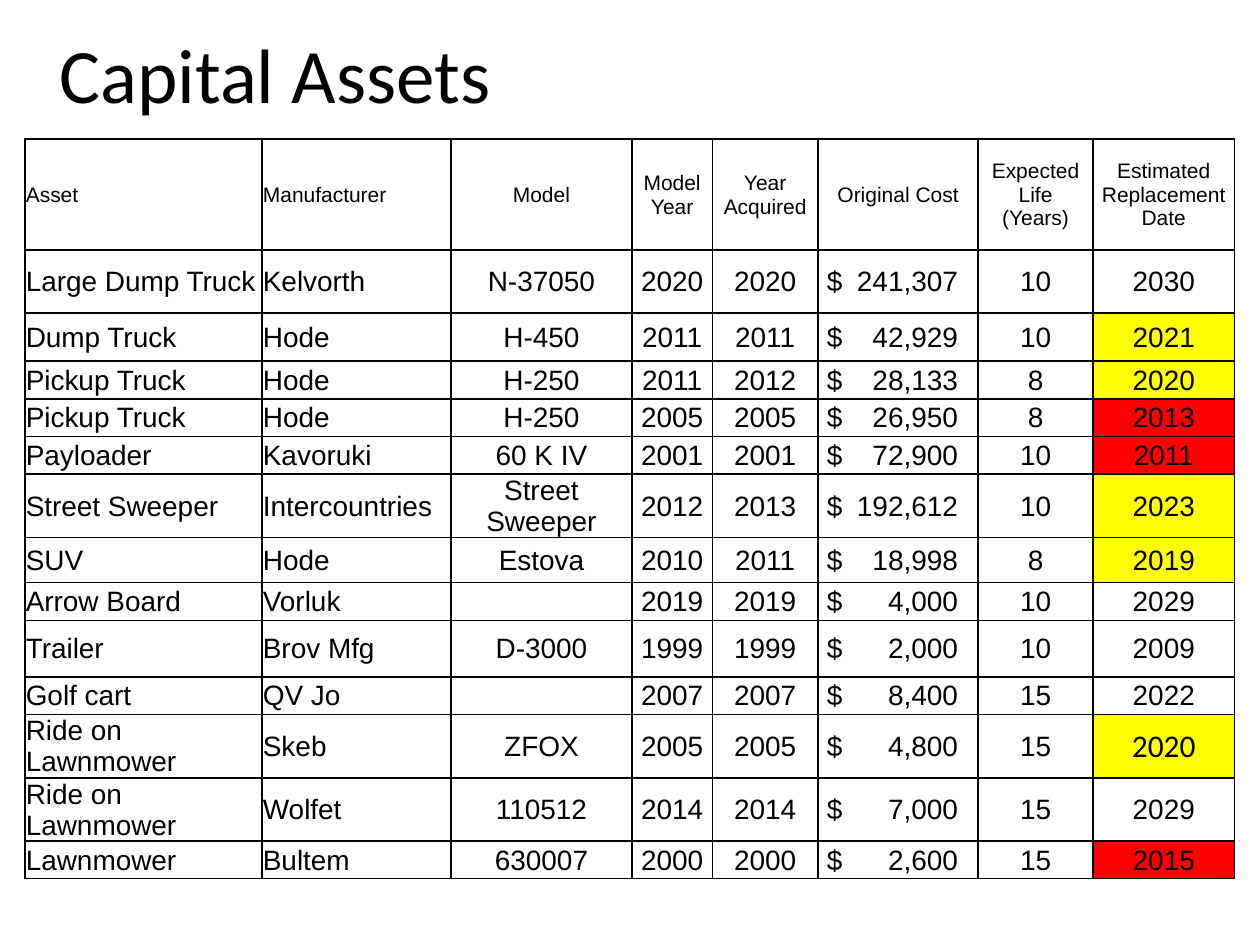
"""Build the Capital Assets slide with its equipment table."""
from lxml.etree import SubElement
from pptx import Presentation
from pptx.dml.color import RGBColor
from pptx.enum.text import MSO_ANCHOR as Anchor, MSO_AUTO_SIZE as AutoSize, PP_ALIGN as Align
from pptx.oxml.ns import qn
from pptx.util import Cm, Pt

BLACK = RGBColor(0x00, 0x00, 0x00)
YELLOW = RGBColor(0xFF, 0xFF, 0x00)
RED = RGBColor(0xFF, 0x00, 0x00)

HEADERS = ["Asset", "Manufacturer", "Model", "Model Year", "Year Acquired",
           "Original Cost", "Expected Life\n(Years)", "Estimated Replacement Date"]
ASSETS = [
    (["Large Dump Truck", "Kelvorth", "N-37050", 2020, 2020, 241307, 10, 2030], 1.27, None),
    (["Dump Truck", "Hode", "H-450", 2011, 2011, 42929, 10, 2021], 0.97, YELLOW),
    (["Pickup Truck", "Hode", "H-250", 2011, 2012, 28133, 8, 2020], 0.76, YELLOW),
    (["Pickup Truck", "Hode", "H-250", 2005, 2005, 26950, 8, 2013], 0.76, RED),
    (["Payloader", "Kavoruki", "60 K IV", 2001, 2001, 72900, 10, 2011], 0.76, RED),
    (["Street Sweeper", "Intercountries", "Street Sweeper", 2012, 2013, 192612, 10, 2023],
     0.94, YELLOW),
    (["SUV", "Hode", "Estova", 2010, 2011, 18998, 8, 2019], 0.91, YELLOW),
    (["Arrow Board", "Vorluk", "", 2019, 2019, 4000, 10, 2029], 0.76, None),
    (["Trailer", "Brov Mfg", "D-3000", 1999, 1999, 2000, 10, 2009], 1.14, None),
    (["Golf cart", "QV Jo", "", 2007, 2007, 8400, 15, 2022], 0.76, None),
    (["Ride on Lawnmower", "Skeb", "ZFOX", 2005, 2005, 4800, 15, 2020], 0.76, YELLOW),
    (["Ride on Lawnmower", "Wolfet", "110512", 2014, 2014, 7000, 15, 2029], 0.76, None),
    (["Lawnmower", "Bultem", "630007", 2000, 2000, 2600, 15, 2015], 0.76, RED),
]
COLUMN_WIDTHS = [4.78, 3.81, 3.65, 1.62, 2.13, 3.23, 2.31, 2.86]
HEADER_HEIGHT = 2.24
COST_COLUMN = 5
REPLACEMENT_COLUMN = 7
LEFT_COLUMNS = (0, 1)
LARGER_DATE_ROW = 11


class SlideBuilder:
    """Hold the slide and its text styles."""

    title_style = {"name": "Calibri", "size": Pt(44), "bold": False}
    header_style = {"name": "Arial", "size": Pt(12), "bold": False}
    body_style = {"name": "Arial", "size": Pt(16), "bold": False}
    larger_style = {"name": "Calibri", "size": Pt(18), "bold": False}

    def __init__(self, presentation):
        self.slide = presentation.slides.add_slide(presentation.slide_layouts[5])

    def format_text(self, text_frame, style, align):
        for paragraph in text_frame.paragraphs:
            paragraph.alignment = align
            for run in paragraph.runs:
                for name, value in style.items():
                    setattr(run.font, name, value)
                run.font.color.rgb = BLACK
            if not paragraph.runs:
                SubElement(paragraph._p, qn("a:endParaRPr"),
                           sz=str(int(style["size"].pt * 100)))

    def title(self, text, left, top, width, height):
        shape = self.slide.shapes.title
        shape.left, shape.top, shape.width, shape.height = map(Cm, (left, top, width, height))
        frame = shape.text_frame
        frame.text = text
        frame.auto_size = AutoSize.NONE
        frame.vertical_anchor = Anchor.MIDDLE
        frame.paragraphs[0].line_spacing = 0.9
        self.format_text(frame, self.title_style, Align.LEFT)

    def cell(self, cell, text, style, align, fill=None):
        cell.text = text
        values = {"margin_left": Cm(0.02), "margin_right": Cm(0.02), "margin_top": Cm(0.02),
                  "margin_bottom": 0, "vertical_anchor": Anchor.MIDDLE}
        for name, value in values.items():
            setattr(cell, name, value)
        properties = cell._tc.get_or_add_tcPr()
        for side in ("a:lnL", "a:lnR", "a:lnT", "a:lnB"):
            line = SubElement(properties, qn(side), w=str(Pt(1)))
            SubElement(SubElement(line, qn("a:solidFill")), qn("a:srgbClr"), val=str(BLACK))
        if fill is None:
            cell.fill.background()
        else:
            cell.fill.solid()
            cell.fill.fore_color.rgb = fill
        self.format_text(cell.text_frame, style, align)

    def cost_cell(self, cell, amount):
        self.cell(cell, f"$\t{amount:,}", self.body_style, Align.LEFT)
        cell.margin_left = Cm(0.18)
        properties = cell.text_frame.paragraphs[0]._p.get_or_add_pPr()
        tabs = SubElement(properties, qn("a:tabLst"))
        SubElement(tabs, qn("a:tab"), pos=str(Cm(2.64)), algn="r")

    def asset_table(self, left, top):
        heights = [HEADER_HEIGHT] + [height for _, height, _ in ASSETS]
        table = self.slide.shapes.add_table(
            len(heights), len(HEADERS), Cm(left), Cm(top),
            Cm(sum(COLUMN_WIDTHS)), Cm(sum(heights))).table
        table.first_row = table.horz_banding = False
        for column, width in zip(table.columns, COLUMN_WIDTHS):
            column.width = Cm(width)
        for row, height in zip(table.rows, heights):
            row.height = Cm(height)
        for index, header in enumerate(HEADERS):
            align = Align.LEFT if index in LEFT_COLUMNS else Align.CENTER
            self.cell(table.cell(0, index), header, self.header_style, align)
        for row, (values, _, highlight) in enumerate(ASSETS, 1):
            for index, value in enumerate(values):
                cell = table.cell(row, index)
                if index == COST_COLUMN:
                    self.cost_cell(cell, value)
                    continue
                is_date = index == REPLACEMENT_COLUMN
                larger = is_date and row == LARGER_DATE_ROW
                self.cell(cell, str(value),
                          self.larger_style if larger else self.body_style,
                          Align.LEFT if index in LEFT_COLUMNS else Align.CENTER,
                          highlight if is_date else None)


def main():
    presentation = Presentation()
    presentation.slide_width, presentation.slide_height = Cm(25.4), Cm(19.05)
    builder = SlideBuilder(presentation)
    builder.title("Capital Assets", 0.94, 0.36, 21.89, 2.44)
    builder.asset_table(0.5, 2.8)
    presentation.save("out.pptx")


if __name__ == "__main__":
    main()
